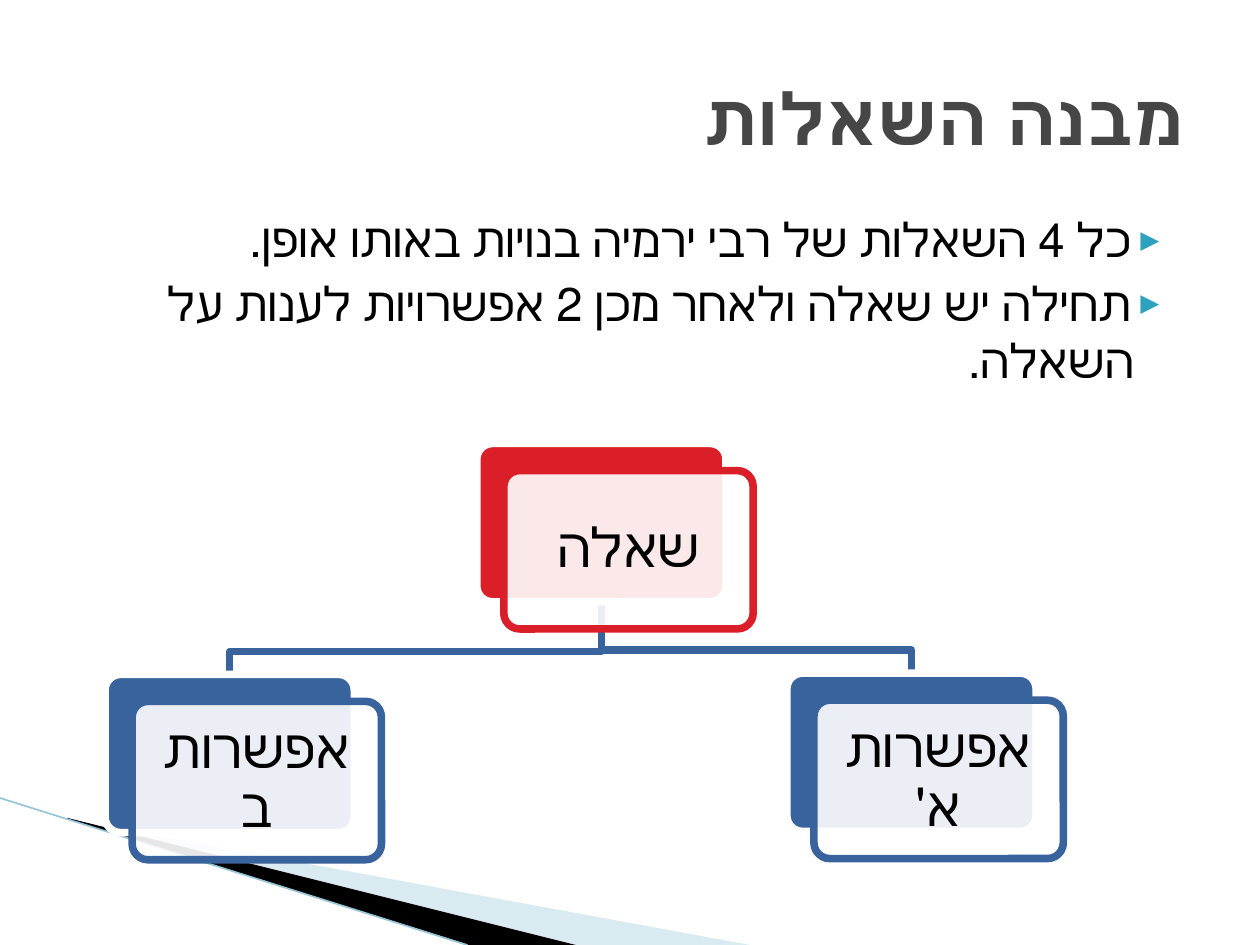
from dataclasses import dataclass

from lxml import etree
from pptx import Presentation
from pptx.dml.color import RGBColor
from pptx.enum.shapes import MSO_CONNECTOR, MSO_SHAPE
from pptx.enum.text import MSO_ANCHOR, MSO_AUTO_SIZE, PP_ALIGN
from pptx.oxml.ns import qn
from pptx.util import Pt

STRAIGHT = MSO_CONNECTOR.STRAIGHT
ROUND = MSO_SHAPE.ROUNDED_RECTANGLE
TOP, MIDDLE = MSO_ANCHOR.TOP, MSO_ANCHOR.MIDDLE
RIGHT, CENTER = PP_ALIGN.RIGHT, PP_ALIGN.CENTER
NO_FIT = MSO_AUTO_SIZE.NONE


@dataclass(frozen=True)
class Theme:
    font: str = "Noto Sans Mono"
    black: str = "000000"
    white: str = "FFFFFF"
    gray: str = "464646"
    red: str = "DA1F28"
    blue: str = "39639D"
    teal: str = "2DA2BF"
    pale: str = "A0CBDC"
    edge: str = "97C5D8"
    title: float = 41
    body: float = 27
    label: float = 31
    stroke: float = 4.33


@dataclass(frozen=True)
class Card:
    text: str
    left: float
    top: float
    color: str


@dataclass(frozen=True)
class Wedge:
    points: tuple
    color: str
    alpha: int


THEME = Theme()
WIDE, HIGH = 142.5, 90.5  # card size
SHIFT = 15.5  # offset of the front panel
TITLE = "מבנה השאלות"
ITEMS = (
    "כל 4 השאלות של רבי ירמיה בנויות באותו אופן.",
    "תחילה יש שאלה ולאחר מכן 2 אפשרויות לענות על השאלה.",
)
ROOT = Card("שאלה", 272.4, 253.4, THEME.red)
LEAVES = (
    Card("אפשרות א'", 449.6, 384.6, THEME.blue),
    Card("אפשרות ב", 60, 385.3, THEME.blue),
)
WEDGES = (
    Wedge(((39.6, 468.6), (428.5, 540), (328.5, 540), (39.6, 468)), THEME.pale, 40),
    Wedge(((38.2, 467.3), (329, 540), (268, 540), (38.9, 468)), THEME.black, 100),
)


def apply(item, values: dict) -> None:
    for name, value in values.items():
        setattr(item, name, value)


def paint(fill, color: str, alpha: int = 100) -> None:
    fill.solid()
    fill.fore_color.rgb = RGBColor.from_string(color)
    if alpha < 100:
        node = fill._xPr.find(qn("a:solidFill"))[0]
        etree.SubElement(node, qn("a:alpha"), val=str(alpha * 1000))


def outline(shape, color: str, width: float) -> None:
    paint(shape.line.fill, color)
    shape.line.width = Pt(width)


def style(para, size: float, color: str, align, bold: bool = False) -> None:
    para._p.get_or_add_pPr().set("rtl", "1")
    para.alignment = align
    apply(para.font, {"name": THEME.font, "size": Pt(size), "bold": bold})
    para.font.color.rgb = RGBColor.from_string(color)


def place(shape, left: float, top: float, width: float, height: float) -> None:
    apply(shape, {"left": Pt(left), "top": Pt(top),
                  "width": Pt(width), "height": Pt(height)})


def add_bullet(para) -> None:
    props = para._p.get_or_add_pPr()
    for name, value in (("marL", Pt(28.8)), ("marR", 0), ("indent", Pt(-20.16))):
        props.set(name, str(int(value)))
    color = etree.SubElement(props, qn("a:buClr"))
    etree.SubElement(color, qn("a:srgbClr"), val=THEME.teal)
    etree.SubElement(props, qn("a:buSzPct"), val="68000")
    etree.SubElement(props, qn("a:buFont"), typeface=THEME.font)
    etree.SubElement(props, qn("a:buChar"), char="▶")


def draw_path(shapes, points: tuple, close: bool):
    spots = [(Pt(x), Pt(y)) for x, y in points]
    pen = shapes.build_freeform(*spots[0])
    pen.add_line_segments(spots[1:], close=close)
    shape = pen.convert_to_shape()
    shape.shadow.inherit = False
    return shape


def draw_wedge(shapes, wedge: Wedge) -> None:
    shape = draw_path(shapes, wedge.points, True)
    paint(shape.fill, wedge.color, wedge.alpha)
    shape.line.fill.background()


def draw_link(shapes, start: Card, end: Card) -> None:
    x, y = start.left + WIDE / 2, start.top + HIGH
    goal = end.left + WIDE / 2
    bend = end.top - 13
    shape = draw_path(shapes, ((x, y), (x, bend), (goal, bend), (goal, end.top)), False)
    shape.fill.background()
    outline(shape, THEME.blue, THEME.stroke)


def draw_panel(shapes, left: float, top: float, fill: str, alpha: int, line: str):
    shape = shapes.add_shape(ROUND, Pt(left), Pt(top), Pt(WIDE), Pt(HIGH))
    shape.adjustments[0] = 0.1
    shape.shadow.inherit = False
    paint(shape.fill, fill, alpha)
    outline(shape, line, THEME.stroke)
    return shape


def draw_card(shapes, card: Card) -> None:
    draw_panel(shapes, card.left, card.top, card.color, 100, THEME.white)
    front = draw_panel(shapes, card.left + SHIFT, card.top + SHIFT,
                       THEME.white, 90, card.color)
    frame = front.text_frame
    sides = ("margin_left", "margin_right", "margin_top", "margin_bottom")
    apply(frame, {"word_wrap": True, "vertical_anchor": MIDDLE,
                  **dict.fromkeys(sides, Pt(7))})
    para = frame.paragraphs[0]
    para.text = card.text
    para.line_spacing = 0.9
    style(para, THEME.label, THEME.black, CENTER)


def main() -> None:
    deck = Presentation()
    apply(deck, {"slide_width": Pt(720), "slide_height": Pt(540)})
    slide = deck.slides.add_slide(deck.slide_layouts[1])
    shapes = slide.shapes

    # Title
    title = shapes.title
    place(title, 36, 21.6, 648, 90)
    title.text_frame.text = TITLE
    apply(title.text_frame, {"vertical_anchor": MIDDLE, "auto_size": NO_FIT})
    style(title.text_frame.paragraphs[0], THEME.title, THEME.gray, RIGHT, True)

    # Bullet list
    body = slide.placeholders[1]
    place(body, 36, 116.6, 648, 356.4)
    frame = body.text_frame
    frame.text = "\n".join(ITEMS)
    apply(frame, {"vertical_anchor": TOP, "auto_size": NO_FIT})
    for index, para in enumerate(frame.paragraphs):
        add_bullet(para)
        para.space_before = Pt(4 if index else 0)
        style(para, THEME.body, THEME.black, RIGHT)

    # Corner decoration
    for wedge in WEDGES:
        draw_wedge(shapes, wedge)
    edge = shapes.add_connector(STRAIGHT, Pt(0), Pt(456), Pt(267), Pt(540))
    outline(edge, THEME.edge, 0.95)
    etree.SubElement(edge._element.spPr, qn("a:effectLst"))

    # Question tree
    for leaf in LEAVES:
        draw_link(shapes, ROOT, leaf)
    for card in (ROOT, *LEAVES):
        draw_card(shapes, card)

    deck.save("out.pptx")


if __name__ == "__main__":
    main()
